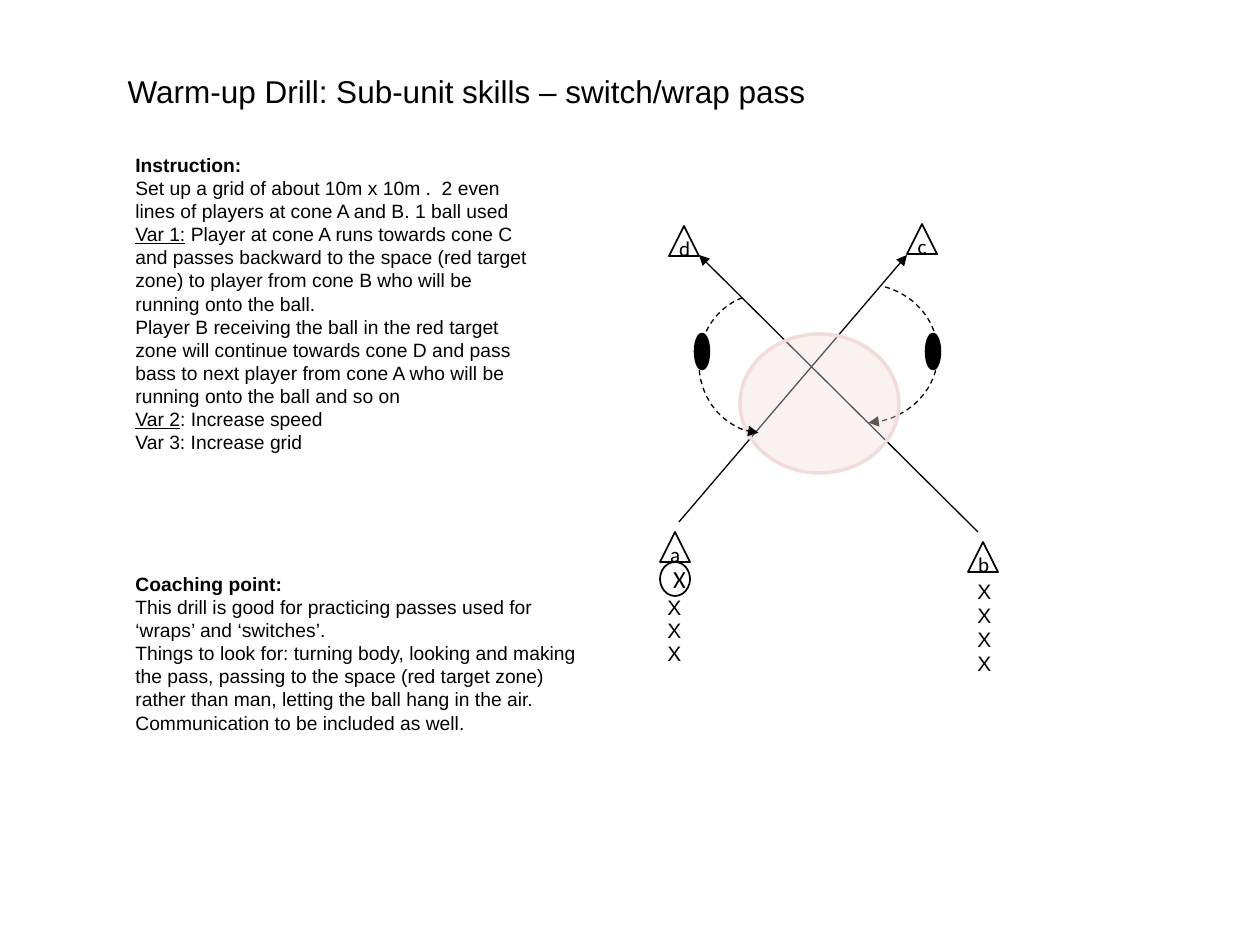
from pptx import Presentation
from pptx.dml.color import RGBColor
from pptx.enum.dml import MSO_LINE
from pptx.enum.shapes import MSO_CONNECTOR, MSO_SHAPE
from pptx.enum.text import MSO_ANCHOR, MSO_AUTO_SIZE, PP_ALIGN
from pptx.oxml.ns import qn
from pptx.util import Emu, Pt
from lxml.etree import SubElement

EMU_PER_PX = 914400 / 126
COLORS = {"ink": "000000", "zone": "F2DCDB"}
X_SIZE = (59, 38)

INSTRUCTION = [
    [("Instruction:", "bold")],
    [("Set up a grid of about 10m x 10m .  2 even lines of players at cone A and B. 1 ball used", "")],
    [("Var 1:", "underline"),
     (" Player at cone A runs towards cone C and passes backward to the space (red target zone) "
      "to player from cone B who will be running onto the ball.", "")],
    [("Player B receiving the ball in the red target zone will continue towards cone D and pass "
      "bass to next player from cone A who will be running onto the ball and so on", "")],
    [("Var 2", "underline"), (": Increase speed", "")],
    [("Var 3: Increase grid", "")],
]
COACHING = [
    [("Coaching point:", "bold")],
    [("This drill is good for practicing passes used for ‘wraps’ and ‘switches’.", "")],
    [("Things to look for: turning body, looking and making the pass, passing to the space "
      "(red target zone) rather than man, letting the ball hang in the air.", "")],
    [("Communication to be included as well.", "")],
]


def px(*lengths):
    """Turn pixel lengths into EMU."""
    return [Emu(round(length * EMU_PER_PX)) for length in lengths]


def rgb(name):
    """Look up a named colour."""
    return RGBColor.from_string(COLORS[name])


def write_text(frame, content, size=12, font="Arial", align=PP_ALIGN.LEFT,
               anchor=MSO_ANCHOR.TOP, wrap=True, fit=MSO_AUTO_SIZE.SHAPE_TO_FIT_TEXT):
    """Write a plain string, or paragraphs of (text, style) runs, into a frame."""
    paragraphs = [[(content, "")]] if isinstance(content, str) else content
    frame.word_wrap = wrap
    frame.auto_size = fit
    frame.vertical_anchor = anchor
    for index, runs in enumerate(paragraphs):
        paragraph = frame.add_paragraph() if index else frame.paragraphs[0]
        paragraph.alignment = align
        for words, style in runs:
            run = paragraph.add_run()
            run.text = words
            run.font.size = Pt(size)
            run.font.name = font
            run.font.color.rgb = rgb("ink")
            run.font.bold = style == "bold"
            run.font.underline = style == "underline"


def add_note(slide, box, content, **text_format):
    """Add a text box."""
    note = slide.shapes.add_textbox(*px(*box))
    write_text(note.text_frame, content, **text_format)


def add_figure(slide, preset, box, line="ink", width=1, fill=None, label="", size=12):
    """Add a preset shape with an optional centred label."""
    figure = slide.shapes.add_shape(preset, *px(*box))
    figure.shadow.inherit = False
    figure.line.color.rgb = rgb(line)
    figure.line.width = Pt(width)
    if fill:
        figure.fill.solid()
        figure.fill.fore_color.rgb = rgb(fill)
    else:
        figure.fill.background()
    if label:
        write_text(figure.text_frame, label, size=size, font="Calibri", align=PP_ALIGN.CENTER,
                   anchor=MSO_ANCHOR.MIDDLE, fit=MSO_AUTO_SIZE.NONE)
    return figure


def add_arrowhead(stroke):
    """Put a triangle at the end of an arc or connector."""
    SubElement(stroke._element.spPr.find(qn("a:ln")), qn("a:tailEnd"), type="triangle")


def add_run_path(slide, start, end):
    """Add a straight arrow for a player's run."""
    run_path = slide.shapes.add_connector(MSO_CONNECTOR.STRAIGHT, *px(*start, *end))
    run_path.line.color.rgb = rgb("ink")
    run_path.line.width = Pt(0.75)
    add_arrowhead(run_path)
    SubElement(run_path._element.spPr, qn("a:effectLst"))


def add_pass(slide, box, mirrored=False):
    """Add a dashed arc with an arrowhead for the flight of the ball."""
    flight = add_figure(slide, MSO_SHAPE.ARC, box, width=0.75)
    flight.adjustments[0] = 172.75
    flight.adjustments[1] = 51.54
    flight.line.dash_style = MSO_LINE.DASH
    add_arrowhead(flight)
    if mirrored:
        flight._element.spPr.find(qn("a:xfrm")).set("flipH", "1")


def add_ball(slide, left):
    """Add an upright ball."""
    ball = add_figure(slide, MSO_SHAPE.OVAL, (left, 345, 34, 13), width=2, fill="ink")
    ball.rotation = 90


def add_target_zone(slide):
    """Add the translucent target zone."""
    zone = add_figure(slide, MSO_SHAPE.OVAL, (740, 334, 159, 139), line="zone", width=2, fill="zone")
    tint = zone._element.spPr.find(qn("a:solidFill")).find(qn("a:srgbClr"))
    SubElement(tint, qn("a:alpha"), val="38000")


def add_queue(slide, left, top, step, count):
    """Add a column of waiting players."""
    for place in range(count):
        add_note(slide, (left, top + place * step, *X_SIZE), "X")


def main():
    """Build the drill slide."""
    deck = Presentation()
    deck.slide_width, deck.slide_height = px(1260, 945)
    slide = deck.slides.add_slide(deck.slide_layouts[5])

    title = slide.shapes.title
    title.left, title.top, title.width, title.height = px(115, 66, 709, 50)
    write_text(title.text_frame, "Warm-up Drill: Sub-unit skills – switch/wrap pass", size=18, wrap=False)

    cones = {"c": (907, 224), "b": (968, 542), "d": (669, 226), "a": (660, 532)}
    for letter, corner in cones.items():
        add_figure(slide, MSO_SHAPE.ISOSCELES_TRIANGLE, (*corner, 30, 30), label=letter)

    add_note(slide, (123, 147, 427, 367), INSTRUCTION, size=11)
    add_note(slide, (123, 566, 466, 214), COACHING, size=11)
    add_queue(slide, 655, 588, 23, 3)
    add_queue(slide, 965, 572, 24, 4)

    add_ball(slide, 916)
    add_run_path(slide, (679, 522), (907, 255))
    add_pass(slide, (789, 284, 149, 139))
    add_run_path(slide, (978, 532), (699, 255))
    add_figure(slide, MSO_SHAPE.OVAL, (660, 562, 30, 34), label="X", size=14)
    add_target_zone(slide)
    add_pass(slide, (699, 294, 129, 139), mirrored=True)
    add_ball(slide, 685)

    deck.save("out.pptx")


if __name__ == "__main__":
    main()
